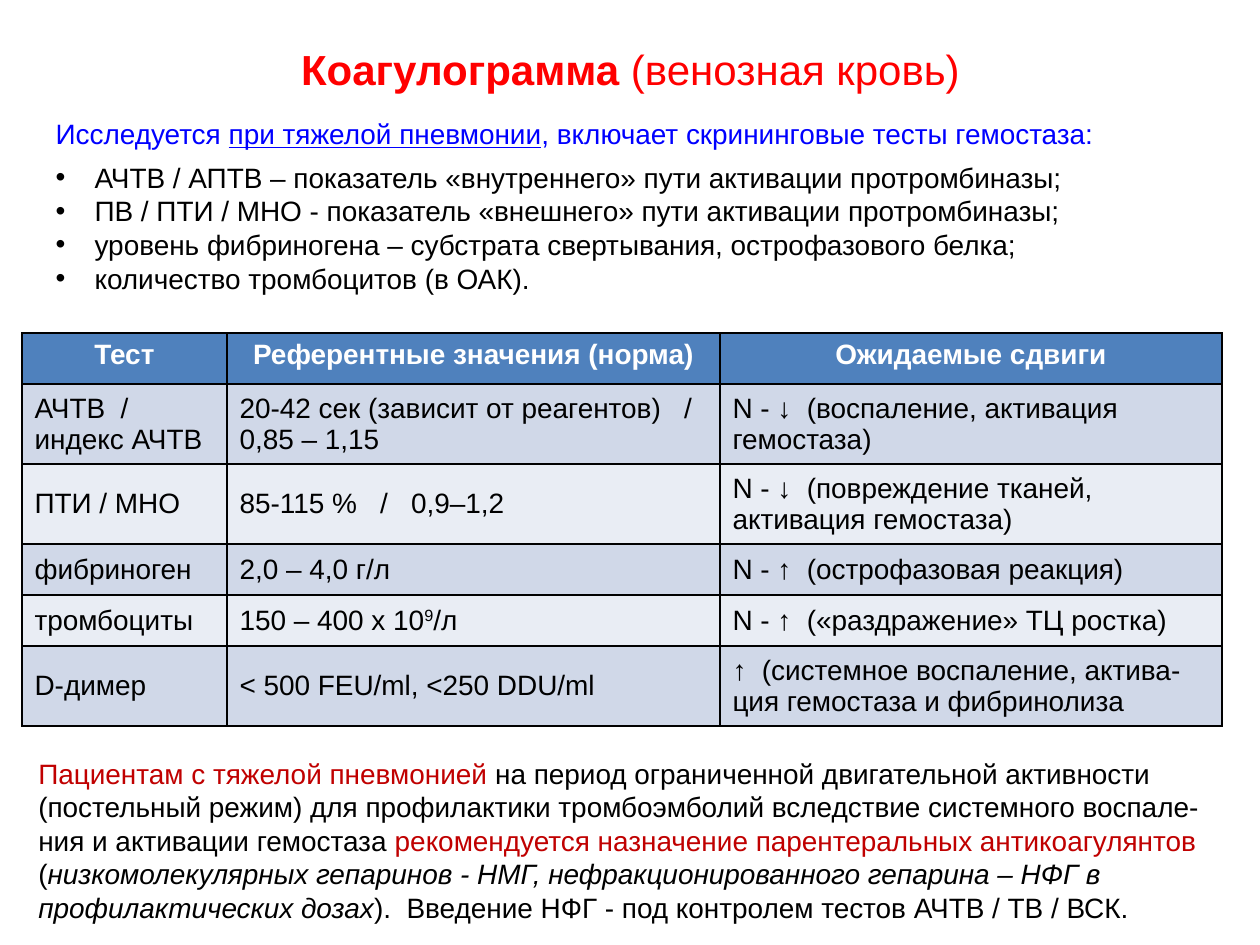
from lxml.etree import SubElement
from pptx import Presentation
from pptx.dml.color import RGBColor
from pptx.enum.text import MSO_ANCHOR as ANCHOR, MSO_AUTO_SIZE as AUTO, PP_ALIGN as ALIGN
from pptx.oxml.ns import qn
from pptx.util import Emu, Pt

PX = 914400 // 126
BLACK = RGBColor(0, 0, 0)
WHITE = RGBColor(255, 255, 255)
RED = RGBColor(255, 0, 0)
DARK_RED = RGBColor(0xC0, 0, 0)
BLUE = RGBColor(0, 0, 255)
HEAD_FILL = RGBColor(0x4F, 0x81, 0xBD)
BAND_FILLS = (RGBColor(0xD0, 0xD8, 0xE8), RGBColor(0xE9, 0xED, 0xF4))

TITLE = [("Коагулограмма ", {"bold": True}), ("(венозная кровь)", {"bold": False})]
INTRO = [
    ("Исследуется ", {}),
    ("при тяжелой пневмонии", {"underline": True}),
    (", включает скрининговые тесты гемостаза:", {}),
]
TESTS = [
    "АЧТВ / АПТВ – показатель «внутреннего» пути активации протромбиназы;",
    "ПВ / ПТИ / МНО - показатель «внешнего» пути активации протромбиназы;",
    "уровень фибриногена – субстрата свертывания, острофазового белка;",
    "количество тромбоцитов (в ОАК).",
]
COLUMN_WIDTHS = (205, 493, 502)
ROW_HEIGHTS = (51, 80, 80, 51, 51, 80)
HEADINGS = ("Тест", "Референтные значения (норма)", "Ожидаемые сдвиги")
RESULTS = [
    ("АЧТВ  /\vиндекс АЧТВ", "20-42 сек (зависит от реагентов)   /\n0,85 – 1,15",
     "N - ↓  (воспаление, активация гемостаза)"),
    ("ПТИ / МНО", "85-115 %   /   0,9–1,2",
     "N - ↓  (повреждение тканей, активация гемостаза)"),
    ("фибриноген", "2,0 – 4,0 г/л", "N - ↑  (острофазовая реакция)"),
    ("тромбоциты", "150 – 400 х 10^9^/л", "N - ↑  («раздражение» ТЦ ростка)"),
    ("D-димер", "< 500 FEU/ml, <250 DDU/ml",
     "↑  (системное воспаление, актива-ция гемостаза и фибринолиза"),
]
ADVICE = [
    ("Пациентам с тяжелой пневмонией ", {"color": DARK_RED}),
    ("на период ограниченной двигательной активности (постельный режим) для "
     "профилактики тромбоэмболий вследствие системного воспале-ния и активации "
     "гемостаза ", {}),
    ("рекомендуется назначение парентеральных антикоагулянтов ", {"color": DARK_RED}),
    ("(", {}),
    ("низкомолекулярных гепаринов - НМГ, нефракционированного гепарина – НФГ в "
     "профилактических дозах", {"italic": True}),
    (").  Введение НФГ - под контролем тестов АЧТВ / ТВ / ВСК.", {}),
]


def px(n):
    return Emu(n * PX)


def place(sp, left, top, width, height):
    sp.left, sp.top, sp.width, sp.height = map(px, (left, top, width, height))


def add_runs(p, runs, size=16, color=BLACK):
    for text, style in runs:
        for i, part in enumerate(text.split("\v")):
            if i:
                p.add_line_break()
            r = p.add_run()
            r.text = part
            font = r.font
            font.name, font.size = "Arial", Pt(size)
            font.color.rgb = style.get("color", color)
            font.bold = style.get("bold")
            font.italic = style.get("italic")
            font.underline = style.get("underline")
            if "baseline" in style:
                r._r.get_or_add_rPr().set("baseline", style["baseline"])


def set_bullet(p, char=None):
    pPr = p._p.get_or_add_pPr()
    indent = px(39) if char else 0
    pPr.set("marL", str(indent))
    pPr.set("indent", str(-indent))
    if char:
        SubElement(pPr, qn("a:buFont")).set("typeface", "Arial")
        SubElement(pPr, qn("a:buChar")).set("char", char)
    else:
        SubElement(pPr, qn("a:buNone"))


def add_title(slide):
    sp = slide.shapes.title
    place(sp, 53, 37, 1155, 63)
    tf = sp.text_frame
    tf.auto_size, tf.vertical_anchor = AUTO.NONE, ANCHOR.MIDDLE
    p = tf.paragraphs[0]
    p.alignment = ALIGN.CENTER
    add_runs(p, TITLE, 24, RED)


def add_list(slide):
    sp = slide.placeholders[1]
    place(sp, 43, 110, 1170, 193)
    tf = sp.text_frame
    tf.auto_size = AUTO.NONE
    p = tf.paragraphs[0]
    set_bullet(p)
    p.space_before, p.space_after = Pt(0), Pt(6)
    add_runs(p, INTRO, color=BLUE)
    for test in TESTS:
        p = tf.add_paragraph()
        set_bullet(p, "•")
        p.space_before = Pt(0)
        add_runs(p, [(test, {})])


def add_borders(cell):
    tcPr = cell._tc.get_or_add_tcPr()
    for i, side in enumerate(("lnL", "lnR", "lnT", "lnB")):
        ln = tcPr.makeelement(qn(f"a:{side}"), {"w": str(Pt(1))})
        fill = SubElement(ln, qn("a:solidFill"))
        SubElement(fill, qn("a:srgbClr")).set("val", str(BLACK))
        tcPr.insert(i, ln)


def fill_cell(cell, text, fill, heading):
    cell.fill.solid()
    cell.fill.fore_color.rgb = fill
    add_borders(cell)
    cell.vertical_anchor = ANCHOR.TOP if heading else ANCHOR.MIDDLE
    tf = cell.text_frame
    for i, line in enumerate(text.split("\n")):
        p = tf.add_paragraph() if i else tf.paragraphs[0]
        p.alignment = ALIGN.CENTER if heading else ALIGN.LEFT
        runs = [(part, {"bold": heading, **({"baseline": "30000"} if k % 2 else {})})
                for k, part in enumerate(line.split("^"))]
        add_runs(p, runs, color=WHITE if heading else BLACK)


def add_results(slide):
    rows = [HEADINGS, *RESULTS]
    frame = slide.shapes.add_table(len(rows), len(HEADINGS), px(22), px(333),
                                   px(sum(COLUMN_WIDTHS)), px(sum(ROW_HEIGHTS)))
    table = frame.table
    for column, width in zip(table.columns, COLUMN_WIDTHS):
        column.width = px(width)
    for i, (row, height, texts) in enumerate(zip(table.rows, ROW_HEIGHTS, rows)):
        row.height = px(height)
        fill = BAND_FILLS[(i - 1) % 2] if i else HEAD_FILL
        for cell, text in zip(row.cells, texts):
            fill_cell(cell, text, fill, i == 0)


def add_advice(slide):
    sp = slide.shapes.add_textbox(px(26), px(750), px(1211), px(183))
    tf = sp.text_frame
    tf.word_wrap = True
    add_runs(tf.paragraphs[0], ADVICE)


def main():
    prs = Presentation()
    prs.slide_width, prs.slide_height = px(1260), px(945)
    slide = prs.slides.add_slide(prs.slide_layouts[1])
    add_list(slide)
    add_title(slide)
    add_results(slide)
    add_advice(slide)
    prs.save("out.pptx")


if __name__ == "__main__":
    main()
